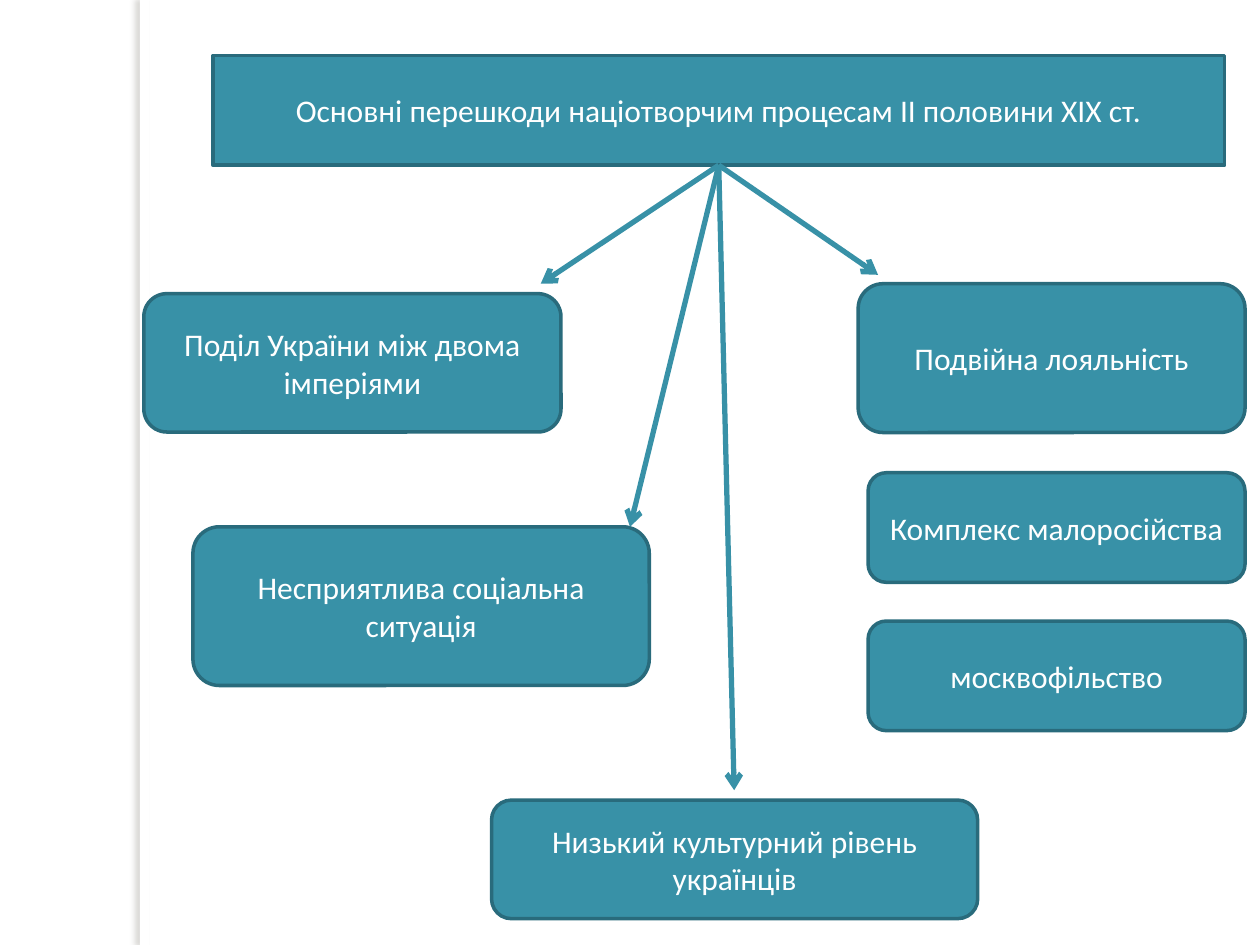
from dataclasses import dataclass

from lxml.etree import SubElement
from pptx import Presentation
from pptx.dml.color import RGBColor
from pptx.enum.shapes import MSO_CONNECTOR, MSO_SHAPE
from pptx.enum.text import MSO_ANCHOR, MSO_AUTO_SIZE, PP_ALIGN
from pptx.oxml import parse_xml
from pptx.oxml.ns import nsdecls, qn
from pptx.util import Cm, Pt


@dataclass(frozen=True)
class Theme:
    """Colours, font and sizes of the slide."""
    teal: RGBColor = RGBColor(0x38, 0x91, 0xA7)
    outline: RGBColor = RGBColor(0x29, 0x6B, 0x7C)
    white: RGBColor = RGBColor(0xFF, 0xFF, 0xFF)
    shadow: RGBColor = RGBColor(0x73, 0x6F, 0x63)
    font: str = "Calibri"
    text_size: Pt = Pt(18)
    outline_width: Pt = Pt(2)
    arrow_width: Pt = Pt(3)


THEME = Theme()
TITLE = "Основні перешкоди націотворчим процесам ІІ половини ХІХ ст."
TITLE_BOX = (4.29, 1.12, 20.4, 2.21)
OBSTACLES = [
    ("Поділ України між двома імперіями", (2.9, 5.92, 8.41, 2.79)),
    ("Подвійна лояльність", (17.3, 5.72, 7.8, 3)),
    ("Комплекс малоросійства", (17.5, 9.53, 7.6, 2.21)),
    ("москвофільство", (17.5, 12.52, 7.6, 2.21)),
    ("Несприятлива соціальна ситуація", (3.89, 10.62, 9.2, 3.2)),
    ("Низький культурний рівень українців", (9.91, 16.13, 9.8, 2.39)),
]
ARROW_ENDS = [(10.9, 5.72), (12.7, 10.62), (17.7, 5.54), (14.8, 15.93)]


def style_box(shape, text):
    """Give a box its fill, outline and centred text."""
    shape.fill.solid()
    shape.fill.fore_color.rgb = THEME.teal
    shape.line.color.rgb = THEME.outline
    shape.line.width = THEME.outline_width
    shape.shadow.inherit = False
    frame = shape.text_frame
    frame.text = text
    frame.word_wrap = True
    frame.auto_size = MSO_AUTO_SIZE.NONE
    frame.vertical_anchor = MSO_ANCHOR.MIDDLE
    paragraph = frame.paragraphs[0]
    paragraph.alignment = PP_ALIGN.CENTER
    paragraph.font.name = THEME.font
    paragraph.font.size = THEME.text_size
    paragraph.font.color.rgb = THEME.white


def add_title(slide):
    """Turn the title placeholder into the rounded heading box."""
    title = slide.shapes.title
    title.left, title.top, title.width, title.height = map(Cm, TITLE_BOX)
    title.element.spPr.append(parse_xml(
        f'<a:prstGeom {nsdecls("a")} prst="roundRect"><a:avLst/></a:prstGeom>'))
    style_box(title, TITLE)


def add_box(slide, text, box):
    """Add one rounded obstacle box."""
    shape = slide.shapes.add_shape(MSO_SHAPE.ROUNDED_RECTANGLE, *map(Cm, box))
    style_box(shape, text)


def add_arrow(slide, start, end):
    """Add a straight arrow with an open head at its end."""
    arrow = slide.shapes.add_connector(MSO_CONNECTOR.STRAIGHT, *map(Cm, start + end))
    arrow.line.color.rgb = THEME.teal
    arrow.line.width = THEME.arrow_width
    SubElement(arrow.line._get_or_add_ln(), qn("a:tailEnd"), type="arrow")
    SubElement(arrow.element.spPr, qn("a:effectLst"))


def add_margin_strip(slide):
    """Add the white strip that casts a soft shadow on the left margin."""
    strip = slide.shapes.add_shape(MSO_SHAPE.RECTANGLE, Cm(2.82), 0, Cm(0.2), Cm(19.05))
    strip.fill.solid()
    strip.fill.fore_color.rgb = THEME.white
    strip.line.fill.background()
    strip.element.spPr.append(parse_xml(
        f'<a:effectLst {nsdecls("a")}>'
        f'<a:outerShdw blurRad="{Pt(3)}" dist="{Pt(3)}" dir="10800000" algn="tl" rotWithShape="0">'
        f'<a:srgbClr val="{THEME.shadow}"><a:alpha val="25000"/></a:srgbClr>'
        '</a:outerShdw></a:effectLst>'))


def main():
    """Build and save the slide."""
    presentation = Presentation()
    presentation.slide_width, presentation.slide_height = Cm(25.4), Cm(19.05)
    slide = presentation.slides.add_slide(presentation.slide_layouts.get_by_name("Title Only"))
    add_margin_strip(slide)
    add_title(slide)
    for text, box in OBSTACLES:
        add_box(slide, text, box)
    left, top, width, height = TITLE_BOX
    start = (left + width / 2, top + height)
    for end in ARROW_ENDS:
        add_arrow(slide, start, end)
    presentation.save("out.pptx")


if __name__ == "__main__":
    main()
